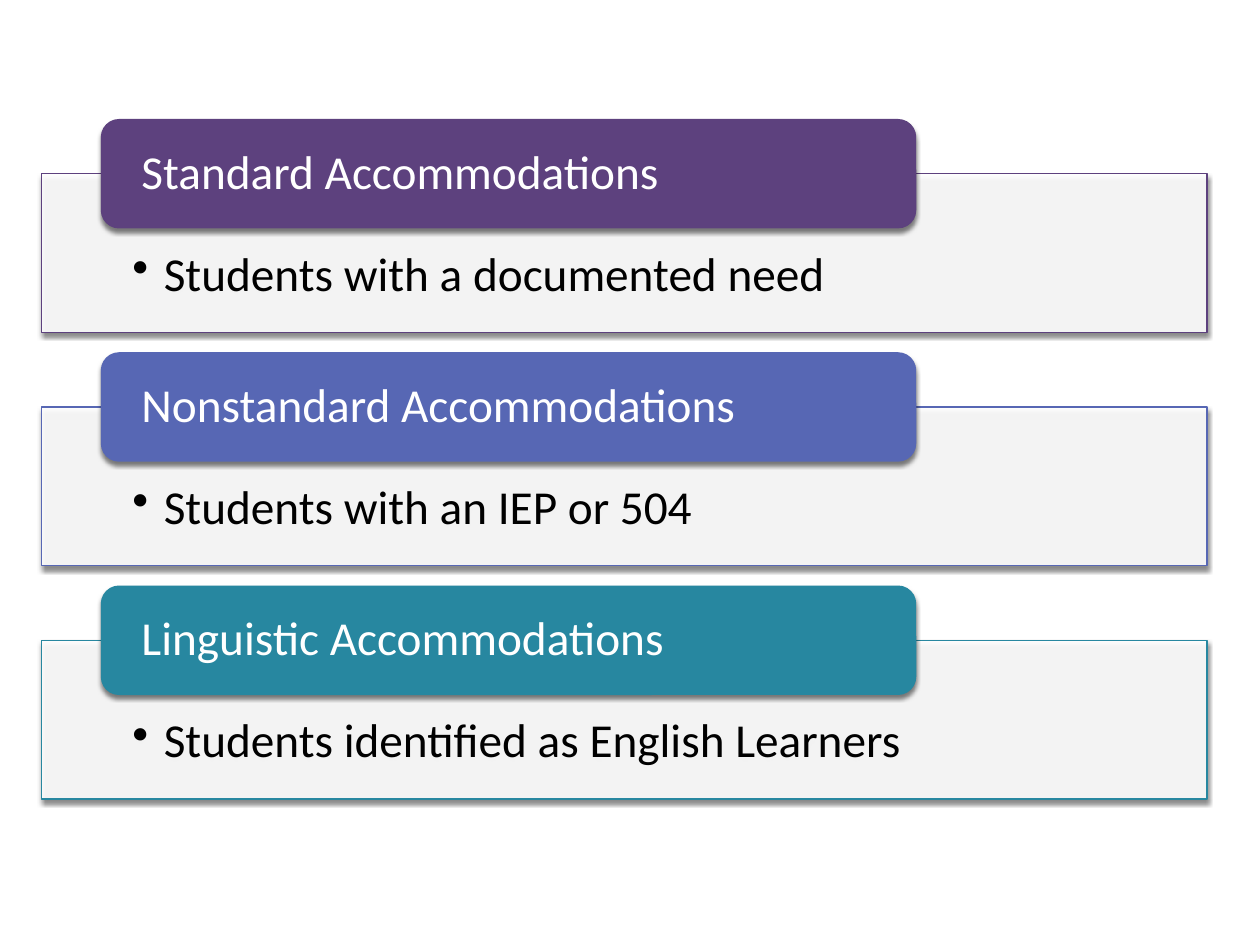
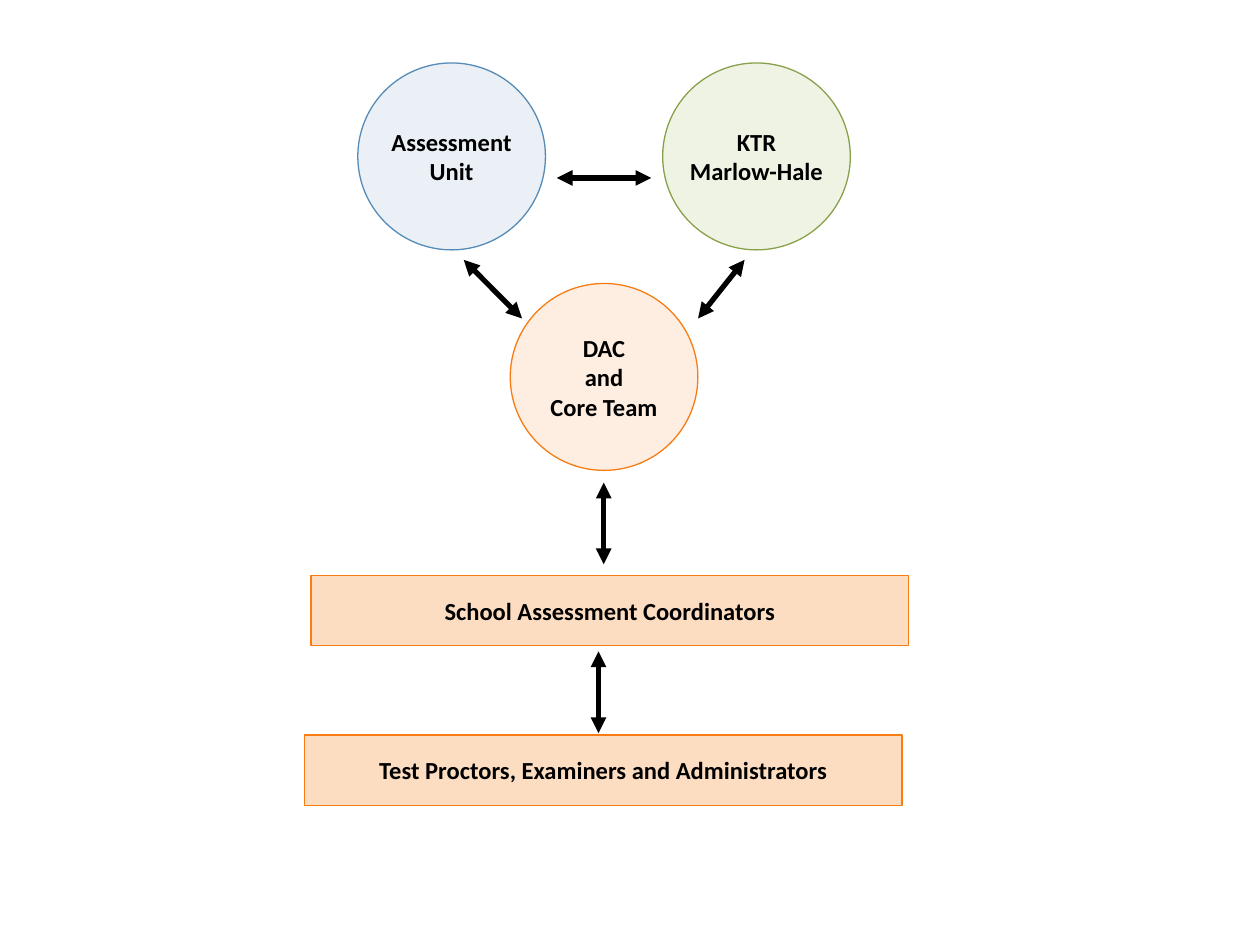
"""Build two slides: accommodation types and assessment communication lines."""
from lxml import etree
from pptx import Presentation
from pptx import util as u
from pptx.dml import color
from pptx.enum import shapes, text
from pptx.oxml import ns

COLORS = {
    "white": "FFFFFF", "black": "000000",
    "purple": "5D417E", "indigo": "5767B4", "teal": "2787A0",
    "blue": "568BB7", "pale blue": "EAF0F6",
    "green": "87A14A", "pale green": "EEF3E4",
    "orange": "F77C12", "pale orange": "FEEEE1", "peach": "FDDDC2",
}
SHAPE = shapes.MSO_SHAPE
FONT = "Calibri"


class Deck:
    def __init__(self, width, height):
        self.presentation = Presentation()
        self.presentation.slide_width = u.Pt(width)
        self.presentation.slide_height = u.Pt(height)
        self.slide = None

    def add_slide(self):
        self.slide = self.presentation.slides.add_slide(self.presentation.slide_layouts[6])

    def rgb(self, name):
        return color.RGBColor.from_string(COLORS[name])

    def node(self, parent, tag, **attributes):
        values = {key: str(value) for key, value in attributes.items()}
        return etree.SubElement(parent, ns.qn(tag), values)

    def box(self, kind, left, top, width, height, fill, line=None, weight=0.75):
        shape = self.slide.shapes.add_shape(kind, *map(u.Pt, (left, top, width, height)))
        shape.shadow.inherit = False
        shape.fill.solid()
        shape.fill.fore_color.rgb = self.rgb(fill)
        if line:
            shape.line.color.rgb = self.rgb(line)
            shape.line.width = u.Pt(weight)
        else:
            shape.line.fill.background()
        return shape

    def shadow(self, shape):
        effects = shape.element.spPr.find(ns.qn("a:effectLst"))
        outer = self.node(effects, "a:outerShdw", blurRad=u.Pt(2.5), dist=u.Pt(2),
                          dir=5400000, rotWithShape=0)
        shade = self.node(outer, "a:srgbClr", val=COLORS["black"])
        self.node(shade, "a:alpha", val=50000)

    def fade(self, shape, percent):
        fill = shape.element.spPr.find(ns.qn("a:solidFill"))
        self.node(fill[0], "a:alpha", val=percent * 1000)

    def label(self, shape, lines, size, ink="black", bold=False, bullet=False, wrap=True,
              align=text.PP_ALIGN.LEFT, anchor=text.MSO_ANCHOR.MIDDLE,
              insets=(7.2, 3.6, 7.2, 3.6), spacing=1.0):
        frame = shape.text_frame
        frame.word_wrap = wrap
        frame.vertical_anchor = anchor
        (frame.margin_left, frame.margin_top,
         frame.margin_right, frame.margin_bottom) = map(u.Pt, insets)
        for index, line in enumerate(lines):
            paragraph = frame.add_paragraph() if index else frame.paragraphs[0]
            paragraph.alignment = align
            paragraph.line_spacing = spacing
            if bullet:
                properties = paragraph._p.get_or_add_pPr()
                properties.set("marL", str(u.Pt(18)))
                properties.set("indent", str(u.Pt(-18)))
                self.node(properties, "a:buChar", char="•")
            run = paragraph.add_run()
            run.text = line
            run.font.name = FONT
            run.font.size = u.Pt(size)
            run.font.bold = bold
            run.font.color.rgb = self.rgb(ink)

    def section(self, top, tint, heading, detail):
        panel = self.box(SHAPE.RECTANGLE, 23.8, top + 31.3, 666, 90.7, "white", tint, 0.79)
        self.fade(panel, 90)
        self.shadow(panel)
        self.label(panel, [detail], 27, bullet=True, anchor=text.MSO_ANCHOR.TOP,
                   insets=(51.8, 43.9, 51.8, 15.1), spacing=0.9)
        tab = self.box(SHAPE.ROUNDED_RECTANGLE, 57.6, top, 466, 62.6, tint)
        self.shadow(tab)
        self.label(tab, [heading], 27, "white", insets=(20.2, 0, 20.2, 0), spacing=0.9)

    def role(self, kind, left, top, width, height, fill, line, lines):
        shape = self.box(kind, left, top, width, height, fill, line)
        self.label(shape, lines, 14, bold=True, wrap=False, align=text.PP_ALIGN.CENTER)

    def circle(self, left, top, fill, line, lines):
        self.role(SHAPE.OVAL, left, top, 107.2, 106.8, fill, line, lines)

    def bar(self, left, top, name):
        self.role(SHAPE.RECTANGLE, left, top, 341.5, 40.2, "peach", "orange", [name])

    def arrow(self, *ends):
        connector = self.slide.shapes.add_connector(
            shapes.MSO_CONNECTOR.STRAIGHT, *map(u.Pt, ends))
        connector.line.color.rgb = self.rgb("black")
        connector.line.width = u.Pt(3)
        properties = connector.element.spPr
        for end in ("a:headEnd", "a:tailEnd"):
            self.node(properties.find(ns.qn("a:ln")), end, type="triangle")
        self.node(properties, "a:effectLst")


def accommodations(deck):
    deck.add_slide()
    sections = [
        ("purple", "Standard Accommodations", "Students with a documented need"),
        ("indigo", "Nonstandard Accommodations", "Students with an IEP or 504"),
        ("teal", "Linguistic Accommodations", "Students identified as English Learners"),
    ]
    for index, section in enumerate(sections):
        deck.section(68 + 133.3 * index, *section)


def communication(deck):
    deck.add_slide()
    deck.circle(204.5, 36, "pale blue", "blue", ["Assessment", "Unit"])
    deck.circle(378.7, 36, "pale green", "green", ["KTR", "Marlow-Hale"])
    deck.circle(291.6, 162, "pale orange", "orange", ["DAC", "and", "Core Team"])
    deck.bar(177.8, 328.8, "School Assessment Coordinators")
    deck.bar(174, 420, "Test Proctors, Examiners and Administrators")
    for ends in [
        (318.2, 101.7, 372.2, 101.7),
        (265, 148.5, 298.3, 182),
        (425.5, 148.5, 398.9, 182),
        (345, 275.8, 345, 322.4),
        (342, 372.2, 342, 419),
    ]:
        deck.arrow(*ends)


def main():
    deck = Deck(720, 540)
    accommodations(deck)
    communication(deck)
    deck.presentation.save("out.pptx")


if __name__ == "__main__":
    main()
